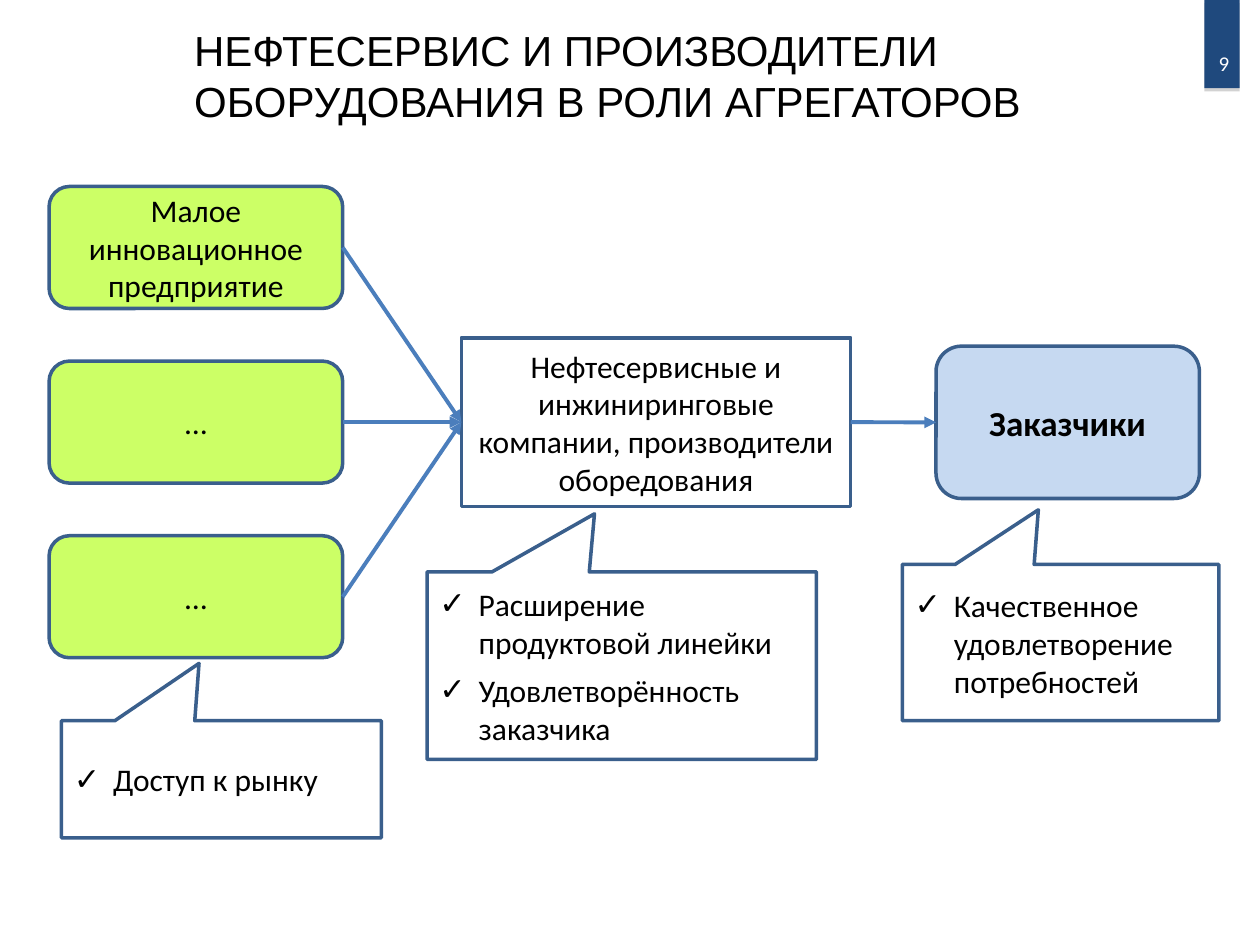
"""Build the slide about oilfield service companies as aggregators."""
import lxml.etree
import pptx
import pptx.dml.color
import pptx.enum.shapes
import pptx.enum.text
import pptx.oxml
import pptx.oxml.ns
import pptx.util

Cm = pptx.util.Cm
Pt = pptx.util.Pt
RGBColor = pptx.dml.color.RGBColor
Shape = pptx.enum.shapes.MSO_SHAPE
Align = pptx.enum.text.PP_ALIGN
qn = pptx.oxml.ns.qn

NAVY = RGBColor(0x1F, 0x49, 0x7D)
OUTLINE = RGBColor(0x3A, 0x5F, 0x8C)
ARROW = RGBColor(0x4B, 0x7E, 0xBC)
LIME = RGBColor(0xCC, 0xFF, 0x66)
PALE_BLUE = RGBColor(0xC6, 0xD9, 0xF1)
WHITE = RGBColor(0xFF, 0xFF, 0xFF)
BLACK = RGBColor(0, 0, 0)
SHADOW = (
    '<a:effectLst xmlns:a="http://schemas.openxmlformats.org/drawingml/2006/main">'
    '<a:outerShdw dist="22860" dir="5400000" rotWithShape="0">'
    '<a:srgbClr val="808080"><a:alpha val="35000"/></a:srgbClr>'
    '</a:outerShdw></a:effectLst>'
)


def format_text(para, size, color=BLACK, font="Calibri", align=Align.CENTER, bold=False):
    para.alignment = align
    for span in para.runs:
        span.font.size = Pt(size)
        span.font.name = font
        span.font.bold = bold
        span.font.color.rgb = color


def add_box(page, kind, place, fill=None):
    box = page.shapes.add_shape(kind, *[Cm(length) for length in place])
    box.shadow.inherit = False
    if fill is None:
        box.fill.background()
    else:
        box.fill.solid()
        box.fill.fore_color.rgb = fill
    box.line.color.rgb = OUTLINE
    box.line.width = Pt(2)
    box.text_frame.word_wrap = True
    box.text_frame.vertical_anchor = pptx.enum.text.MSO_ANCHOR.MIDDLE
    return box


deck = pptx.Presentation()
deck.slide_width = Cm(25.4)
deck.slide_height = Cm(19.05)
page = deck.slides.add_slide(deck.slide_layouts[5])

number_tab = add_box(page, Shape.RECTANGLE, (24.28, 0, 0.71, 1.78), NAVY)
number_tab.line.fill.background()
properties = number_tab.fill._xPr
properties.remove(properties.find(qn("a:effectLst")))
properties.append(pptx.oxml.parse_xml(SHADOW))

number = page.shapes.add_textbox(Cm(24.13), Cm(0.76), Cm(1.09), Cm(1.02))
number.text_frame.word_wrap = True
number.text_frame.vertical_anchor = pptx.enum.text.MSO_ANCHOR.MIDDLE
number.text_frame.text = "9"
format_text(number.text_frame.paragraphs[0], 12, WHITE)

title = page.shapes.title
title.left, title.top, title.width, title.height = Cm(3.66), Cm(0.41), Cm(19.35), Cm(2.21)
title.text_frame.text = "НЕФТЕСЕРВИС И ПРОИЗВОДИТЕЛИ ОБОРУДОВАНИЯ В РОЛИ АГРЕГАТОРОВ"
title.text_frame.vertical_anchor = pptx.enum.text.MSO_ANCHOR.MIDDLE
format_text(title.text_frame.paragraphs[0], 24, font="Arial", align=Align.LEFT)

aggregators = add_box(page, Shape.RECTANGLE, (9.3, 6.81, 7.85, 3.4), WHITE)
aggregators.text_frame.text = (
    "Нефтесервисные и инжиниринговые компании, производители оборедования"
)
format_text(aggregators.text_frame.paragraphs[0], 18)

customers = add_box(page, Shape.ROUNDED_RECTANGLE, (18.87, 6.98, 5.31, 3.07), PALE_BLUE)
customers.text_frame.text = "Заказчики"
format_text(customers.text_frame.paragraphs[0], 20, bold=True)

links = []
for row, label in enumerate(("Малое инновационное предприятие", "…", "…")):
    supplier = add_box(page, Shape.ROUNDED_RECTANGLE, (0.99, 3.76 + 3.52 * row, 5.92, 2.46), LIME)
    supplier.text_frame.text = label
    format_text(supplier.text_frame.paragraphs[0], 18)
    links.append((supplier, aggregators))
links.append((aggregators, customers))

for source, target in links:
    arrow = page.shapes.add_connector(pptx.enum.shapes.MSO_CONNECTOR.STRAIGHT, 0, 0, 0, 0)
    arrow.begin_connect(source, 3)
    arrow.end_connect(target, 1)
    arrow.line.color.rgb = ARROW
    arrow.line.width = Pt(2.25)
    lxml.etree.SubElement(arrow.line._get_or_add_ln(), qn("a:tailEnd"), type="triangle")
    lxml.etree.SubElement(arrow._element.spPr, qn("a:effectLst"))

callouts = (
    ((1.24, 14.53, 6.45, 2.36), (-0.07, -0.99), ("Доступ к рынку",)),
    ((8.61, 11.53, 7.85, 3.78), (-0.07, -0.81),
     ("Расширение продуктовой линейки", "Удовлетворённость заказчика")),
    ((18.19, 11.38, 6.38, 3.15), (-0.07, -0.85), ("Качественное удовлетворение потребностей",)),
)
for place, tip, benefits in callouts:
    callout = add_box(page, Shape.RECTANGULAR_CALLOUT, place)
    callout.adjustments[0], callout.adjustments[1] = tip
    callout.text_frame.text = "\n".join(benefits)
    for index, para in enumerate(callout.text_frame.paragraphs):
        settings = para._p.get_or_add_pPr()
        settings.set("marL", str(Cm(0.79)))
        settings.set("indent", str(-Cm(0.79)))
        lxml.etree.SubElement(settings, qn("a:buFont"), typeface="Arial")
        lxml.etree.SubElement(settings, qn("a:buChar"), char="✓")
        if index:
            para.space_before = Pt(6)
        format_text(para, 18, align=Align.LEFT)

deck.save("out.pptx")
